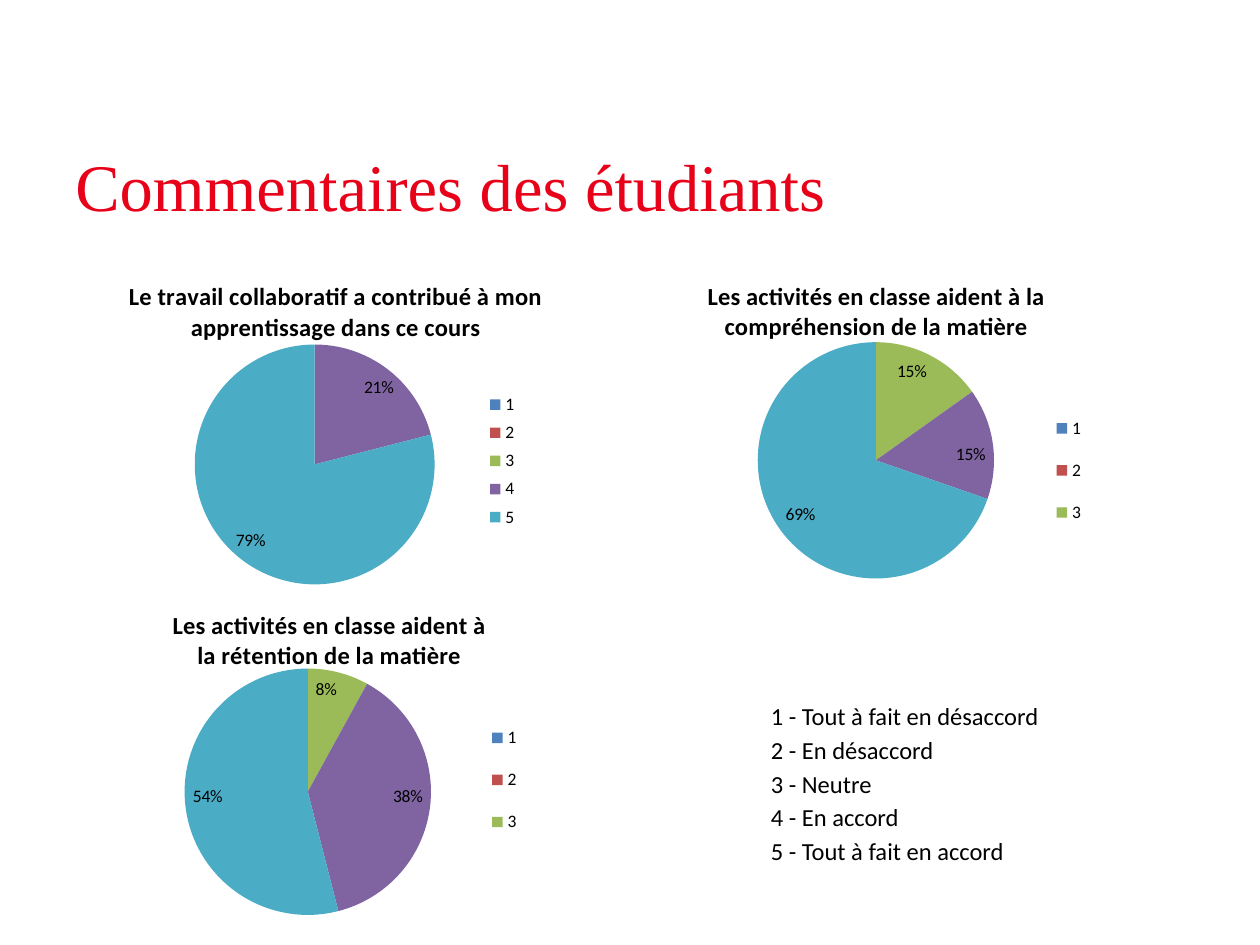
from lxml import etree
from pptx import Presentation
from pptx.chart.data import CategoryChartData
from pptx.dml.color import RGBColor
from pptx.enum.chart import XL_CHART_TYPE, XL_LABEL_POSITION, XL_LEGEND_POSITION
from pptx.enum.text import MSO_ANCHOR
from pptx.oxml.ns import qn
from pptx.util import Inches, Pt

PIE = XL_CHART_TYPE.PIE
BEST_FIT, INSIDE_END = XL_LABEL_POSITION.BEST_FIT, XL_LABEL_POSITION.INSIDE_END
RIGHT = XL_LEGEND_POSITION.RIGHT
TOP, MIDDLE = MSO_ANCHOR.TOP, MSO_ANCHOR.MIDDLE

RATINGS = ["Tout à fait en désaccord", "En désaccord", "Neutre",
           "En accord", "Tout à fait en accord"]
PERCENT_LABELS = {"show_percentage": True, "show_value": False, "number_format": "0%;;"}
VALUE_LABELS = {"show_percentage": False, "show_value": True, "number_format": '0"%";;'}

# Layouts are fractions of the chart: left, top and, where needed, width, height.
SURVEY_CHARTS = [
    {"title": "Le travail collaboratif a contribué à mon apprentissage dans ce cours",
     "box": (0.5, 2.1, 4.44, 2.76), "values": (0, 0, 0, 21, 79),
     "title_at": (0.11, 0.03), "plot_at": (0, 0.23, 0.9, 0.69),
     "legend_at": (0.75, 0.35, 0.07, 0.43),
     "labels": {**PERCENT_LABELS, "position": BEST_FIT}},
    {"title": "Les activités en classe aident à la compréhension de la matière",
     "box": (4.21, 2.1, 4.57, 2.68), "values": (None, None, 15, 15, 69),
     "title_at": (0.3, 0.03), "plot_at": (0.2, 0.23, 0.8, 0.7),
     "legend_at": (0.9, 0.39, 0.07, 0.44), "labels": VALUE_LABELS,
     "hidden_entries": (3, 4)},
    {"title": "Les activités en classe aident à\nla rétention de la matière",
     "box": (0.43, 4.69, 4.33, 2.68), "values": (None, None, 8, 38, 54),
     "title_at": (0.21, 0.04), "plot_at": (0.03, 0.23, 0.87, 0.73),
     "legend_at": (0.79, 0.34, 0.07, 0.44), "labels": PERCENT_LABELS,
     "hidden_entries": (3, 4)},
]


def color(value):
    return RGBColor.from_string(value)


def set_attributes(target, values):
    for name, value in values.items():
        setattr(target, name, value)


def add_value(parent, tag, value):
    child = etree.SubElement(parent, qn(tag))
    child.set("val", str(value))


def set_layout(element, position, inner=False):
    """Place a chart part by fractions of the chart's size."""
    layout = element.find(qn("c:layout"))
    if layout is None:
        layout = etree.Element(qn("c:layout"))
        before = [child for child in element
                  if child.tag in (qn("c:tx"), qn("c:legendPos"), qn("c:legendEntry"))]
        element.insert(len(before), layout)
    for child in list(layout):
        layout.remove(child)
    manual = etree.SubElement(layout, qn("c:manualLayout"))
    if inner:
        add_value(manual, "c:layoutTarget", "inner")
    for axis in "xy":
        add_value(manual, f"c:{axis}Mode", "edge")
    for axis, value in zip("xywh", position):
        add_value(manual, f"c:{axis}", value)


class SlideBuilder:
    """Holds the style and the slide being filled."""
    black, red = "000000", "E7021A"
    body_font, title_font = "Calibri", "Times New Roman"
    slices = ("4F81BD", "C0504D", "9BBB59", "8064A2", "4BACC6")

    def __init__(self, presentation):
        self.slide = presentation.slides.add_slide(presentation.slide_layouts[6])

    def style_font(self, font, size, name=body_font, ink=black, bold=False):
        set_attributes(font, {"name": name, "size": Pt(size), "bold": bold})
        font.color.rgb = color(ink)

    def add_text(self, box, lines, size, name=body_font, ink=black,
                 anchor=TOP, spacing=1.0):
        shape = self.slide.shapes.add_textbox(*map(Inches, box))
        frame = shape.text_frame
        set_attributes(frame, {"word_wrap": True, "vertical_anchor": anchor})
        frame.text = "\n".join(lines)
        for paragraph in frame.paragraphs:
            paragraph.line_spacing = spacing
            self.style_font(paragraph.runs[0].font, size, name, ink)

    def add_pie(self, title, box, values, title_at, plot_at, legend_at, labels,
                hidden_entries=()):
        data = CategoryChartData()
        data.categories = [str(number + 1) for number in range(len(values))]
        data.add_series("Series 1", values)
        chart = self.slide.shapes.add_chart(PIE, *map(Inches, box), data).chart
        self.style_font(chart.font, 10)

        frame = chart.chart_title.text_frame
        frame.text = title
        for paragraph in frame.paragraphs:
            self.style_font(paragraph.runs[0].font, 14, bold=True)
        set_layout(chart.chart_title._element, title_at)

        plot = chart.plots[0]
        set_attributes(plot, {"vary_by_categories": True, "has_data_labels": True})
        set_attributes(plot.data_labels, {
            "number_format_is_linked": False, "position": INSIDE_END, **labels})
        for index, fill_color in enumerate(self.slices):
            fill = plot.series[0].points[index].format.fill
            fill.solid()
            fill.fore_color.rgb = color(fill_color)
        set_layout(chart._chartSpace.chart.plotArea, plot_at, inner=True)

        chart.has_legend = True
        set_attributes(chart.legend, {"position": RIGHT, "include_in_layout": False})
        legend = chart.legend._element
        for order, index in enumerate(hidden_entries, start=1):
            entry = etree.Element(qn("c:legendEntry"))
            add_value(entry, "c:idx", index)
            add_value(entry, "c:delete", 1)
            legend.insert(order, entry)
        set_layout(legend, legend_at)


def main():
    presentation = Presentation()
    set_attributes(presentation, {"slide_width": Inches(10), "slide_height": Inches(7.5)})
    builder = SlideBuilder(presentation)
    builder.add_text((0.5, 0.69, 9, 1.56), ["Commentaires des étudiants"], 38,
                     builder.title_font, builder.red, MIDDLE)
    for survey_chart in SURVEY_CHARTS:
        builder.add_pie(**survey_chart)
    scale = [f"{number} - {rating}" for number, rating in enumerate(RATINGS, start=1)]
    builder.add_text((6.02, 5.48, 3.07, 1.46), scale, 14, spacing=1.15)
    presentation.save("out.pptx")


if __name__ == "__main__":
    main()
